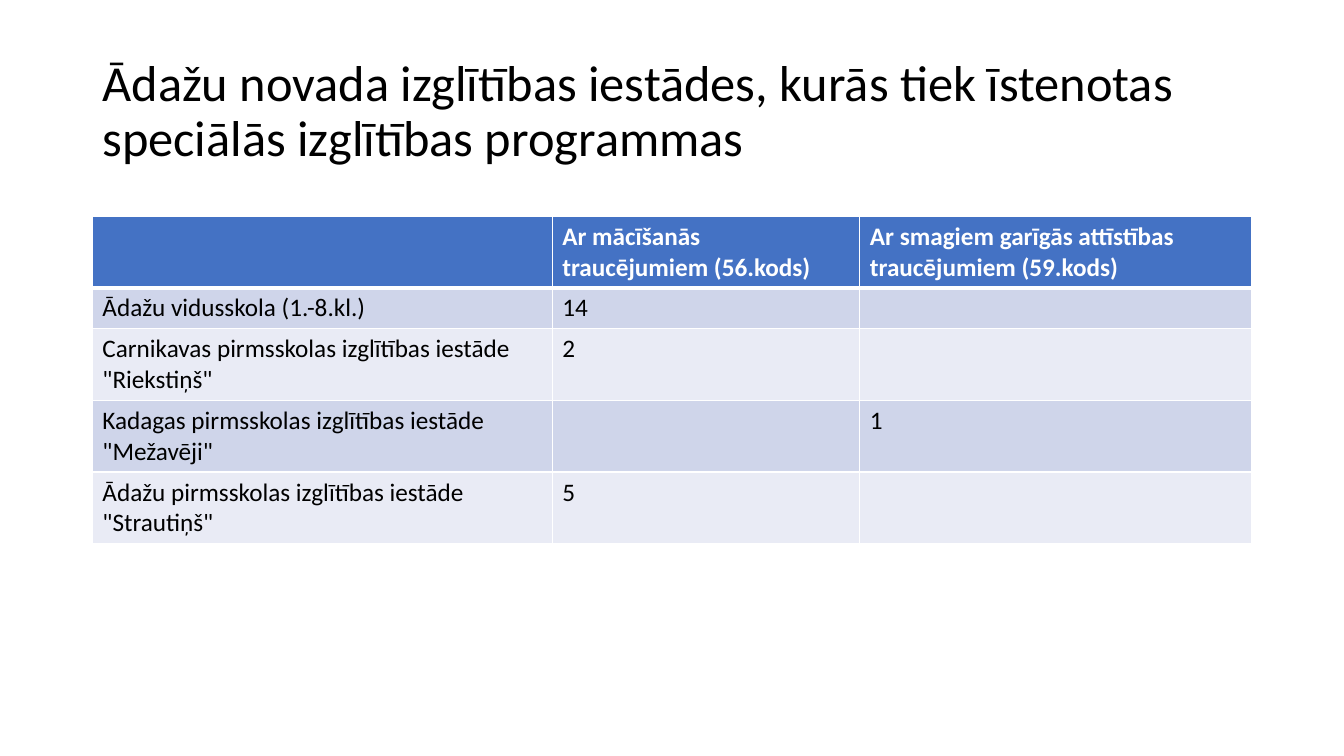
import pptx
import pptx.dml.color
import pptx.enum.text
import pptx.oxml.ns
import pptx.util
from lxml import etree

PX = 9525
FONT = "Calibri"
BLACK, WHITE = "000000", "FFFFFF"
HEADER_FILL = "4472C4"
BAND_FILLS = ("CFD5EA", "E9EBF5")

TITLE = "Ādažu novada izglītības iestādes, kurās tiek īstenotas speciālās izglītības programmas"
COLUMN_WIDTHS = (438, 293, 373)
ROW_HEIGHT = 39
ROWS = (
    ("", "Ar mācīšanās traucējumiem (56.kods)", "Ar smagiem garīgās attīstības traucējumiem (59.kods)"),
    ("Ādažu vidusskola (1.-8.kl.)", "14", ""),
    ('Carnikavas pirmsskolas izglītības iestāde "Riekstiņš"', "2", ""),
    ('Kadagas pirmsskolas izglītības iestāde "Mežavēji"', "", "1"),
    ('Ādažu pirmsskolas izglītības iestāde "Strautiņš"', "5", ""),
)


def px(n):
    return pptx.util.Emu(n * PX)


def rgb(color):
    return pptx.dml.color.RGBColor.from_string(color)


def format_text(tf, size, color, bold=False):
    for p in tf.paragraphs:
        for r in p.runs:
            r.font.name = FONT
            r.font.size = pptx.util.Pt(size)
            r.font.bold = bold
            r.font.color.rgb = rgb(color)


def add_title(slide, text, left, top, width, height):
    sp = slide.shapes.title
    sp.left, sp.top, sp.width, sp.height = map(px, (left, top, width, height))
    tf = sp.text_frame
    tf.text = text
    tf.word_wrap = True
    tf.auto_size = pptx.enum.text.MSO_AUTO_SIZE.NONE
    tf.vertical_anchor = pptx.enum.text.MSO_ANCHOR.MIDDLE
    p = tf.paragraphs[0]
    p.alignment = pptx.enum.text.PP_ALIGN.LEFT
    p.line_spacing = 0.9
    format_text(tf, 36, BLACK)


def set_borders(cell, bottom):
    """Draw white edges, 1 pt wide except for the bottom one."""
    qn = pptx.oxml.ns.qn
    tcPr = cell._tc.get_or_add_tcPr()
    for side, width in (("L", 1), ("R", 1), ("T", 1), ("B", bottom)):
        ln = etree.SubElement(tcPr, qn(f"a:ln{side}"), w=str(pptx.util.Pt(width)))
        fill = etree.SubElement(ln, qn("a:solidFill"))
        etree.SubElement(fill, qn("a:srgbClr"), val=WHITE)


def format_cell(cell, text, fill, color, bold, bottom):
    cell.text = text
    format_text(cell.text_frame, 18, color, bold)
    set_borders(cell, bottom)
    cell.fill.solid()
    cell.fill.fore_color.rgb = rgb(fill)


def add_school_table(slide, left, top):
    table = slide.shapes.add_table(
        len(ROWS), len(COLUMN_WIDTHS), px(left), px(top),
        px(sum(COLUMN_WIDTHS)), px(ROW_HEIGHT * len(ROWS))).table
    for column, width in zip(table.columns, COLUMN_WIDTHS):
        column.width = px(width)
    for i, texts in enumerate(ROWS):
        table.rows[i].height = px(ROW_HEIGHT)
        if i == 0:
            style = (HEADER_FILL, WHITE, True, 3)
        else:
            style = (BAND_FILLS[(i - 1) % 2], BLACK, False, 1)
        for j, text in enumerate(texts):
            format_cell(table.cell(i, j), text, *style)
    # The row under the header shares its thick edge.
    for j in range(len(COLUMN_WIDTHS)):
        edge = table.cell(1, j)._tc.tcPr.find(pptx.oxml.ns.qn("a:lnT"))
        edge.set("w", str(pptx.util.Pt(3)))


def main():
    prs = pptx.Presentation()
    prs.slide_width, prs.slide_height = px(1280), px(720)
    slide = prs.slides.add_slide(prs.slide_layouts[5])
    add_title(slide, TITLE, 88, 38, 1104, 139)
    add_school_table(slide, 88, 206)
    prs.save("out.pptx")


if __name__ == "__main__":
    main()
